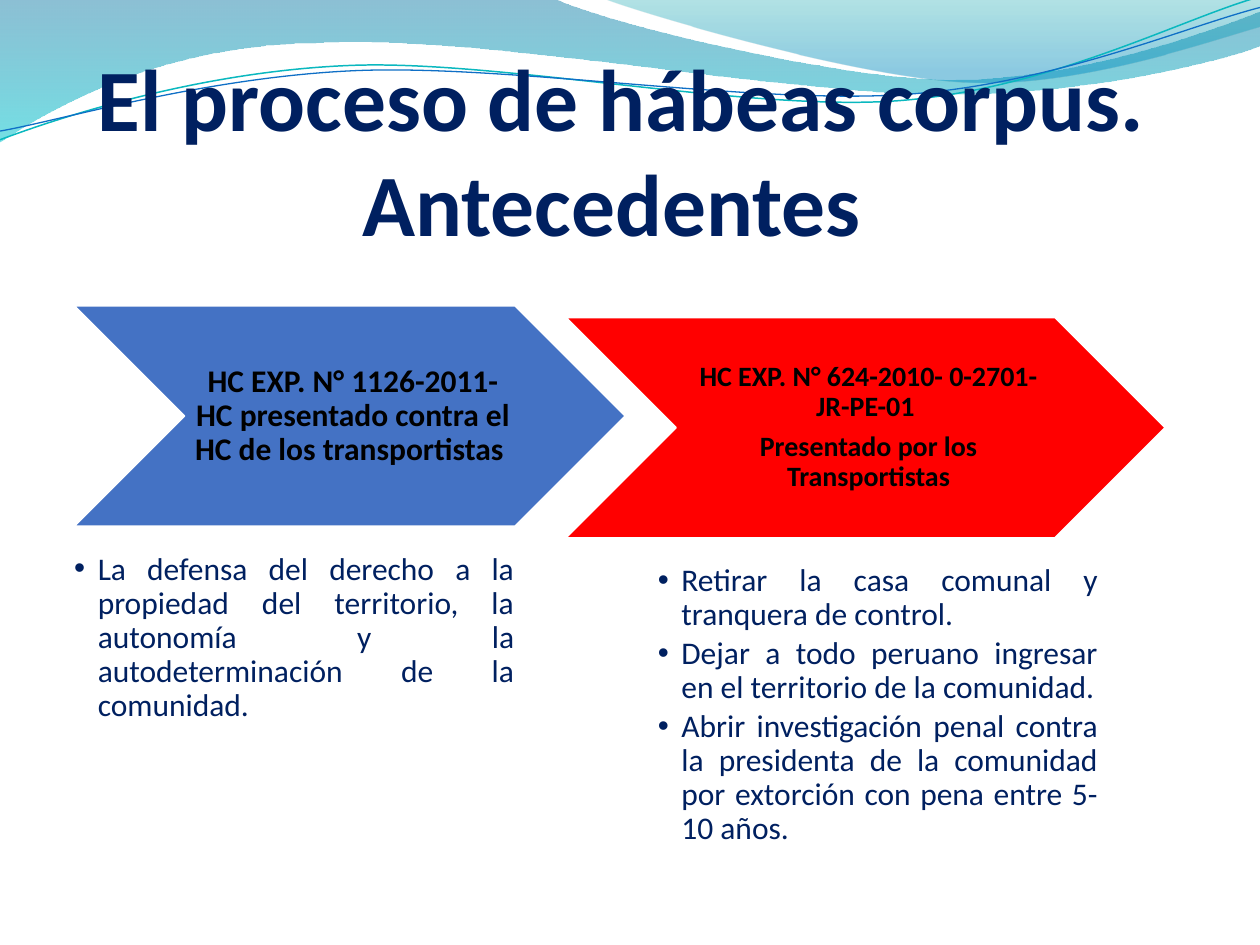
from dataclasses import dataclass

from lxml.etree import SubElement
from pptx import Presentation
from pptx.dml.color import RGBColor
from pptx.enum.shapes import MSO_SHAPE
from pptx.enum.text import MSO_ANCHOR, PP_ALIGN
from pptx.oxml.ns import qn
from pptx.util import Pt


@dataclass(frozen=True)
class Theme:
    font: str = "Calibri"
    navy: str = "002060"
    black: str = "000000"
    white: str = "FFFFFF"
    blue: str = "4472C4"
    red: str = "FF0000"
    title_size: float = 50
    body_size: float = 18
    small_size: float = 16


THEME = Theme()
SLIDE_W, SLIDE_H = 720, 540
CHEVRON_H = 126
CLAIMS_W, CLAIMS_H, CLAIMS_DROP = 251.5, 167, 141.2
WAVE_LINE_TILT = 357.3

# Outlines in points: a start, then one tuple per line (2 numbers) or curve (6).
LEFT_WAVE = [
    (0, -0.7), (316.8, -0.7),
    (342.7, 12.2, 478.1, 45.4, 545.8, 45.4),
    (614.2, 45.4, 689.8, 18.7, 720, 6.5),
    (720.7, 25.9),
    (707.8, 31.7, 626.4, 54.7, 537.1, 54),
    (447.8, 54, 275, 20.2, 185, 24.5),
    (92.9, 25.2, 33.1, 59.8, -0.7, 81.4),
    (0, -0.7),
]
RIGHT_WAVE = [
    (344.9, -0.7),
    (366.5, 7.9, 491, 44.6, 553.7, 46.8),
    (616.3, 49.7, 691.9, 23, 720, 15.1),
    (720, 0),
    (344.9, -0.7),
]
TEAL_LINE = [
    (-1.4, 62.9),
    (33.7, 51.6, 114, 29.4, 199.8, 29.9),
    (284.8, 30.3, 425.8, 67.2, 512.4, 64.8),
    (599, 62.4, 676.4, 25.7, 720.2, 15.5),
]
BLUE_LINE = [
    (-1.1, 57.9),
    (32.9, 53.7, 118.3, 32.5, 204, 33),
    (290.5, 33.5, 428.9, 63, 515.5, 61.4),
    (601.4, 59.7, 678.5, 30.1, 721.4, 21.3),
]


def rgb(color):
    return RGBColor.from_string(color)


def add_outline(slide, outline, close):
    """Draw through all points, then join each curve's three points into one curve."""
    start, *rest = [(Pt(x), Pt(y)) for part in outline
                    for x, y in zip(part[::2], part[1::2])]
    builder = slide.shapes.build_freeform(*start)
    builder.add_line_segments(rest, close=close)
    shape = builder.convert_to_shape()
    shape.shadow.inherit = False
    segments = iter(list(shape._element.iter(qn("a:lnTo"))))
    for part in outline[1:]:
        segment = next(segments)
        if len(part) == 6:
            curve = segment.makeelement(qn("a:cubicBezTo"))
            segment.addprevious(curve)
            for corner in (segment, next(segments), next(segments)):
                curve.append(corner[0])
                corner.getparent().remove(corner)
    return shape


def add_wave(slide, outline, stops):
    """Fill from top to bottom; each stop is position, color, opacity percent."""
    wave = add_outline(slide, outline, close=True)
    wave.line.fill.background()
    wave.fill.gradient()
    wave.fill.gradient_angle = 270
    for stop, (position, color, _) in zip(wave.fill.gradient_stops, stops):
        stop.position = position
        stop.color.rgb = rgb(color)
    for node, (_, _, opacity) in zip(wave._element.iter(qn("a:srgbClr")), stops):
        SubElement(node, qn("a:alpha"), val=str(opacity * 1000))


def add_wave_line(slide, outline, color, width):
    wave_line = add_outline(slide, outline, close=False)
    wave_line.rotation = WAVE_LINE_TILT
    wave_line.fill.background()
    wave_line.line.color.rgb = rgb(color)
    wave_line.line.width = Pt(width)


def add_header_waves(slide):
    add_wave(slide, LEFT_WAVE, [(0, "0074A1", 45), (1, "00C6CF", 55)])
    add_wave(slide, RIGHT_WAVE, [(0, "00A1A9", 30), (0.8, "008BBF", 45)])
    add_wave_line(slide, TEAL_LINE, "0AB8BF", 0.85)
    add_wave_line(slide, BLUE_LINE, "0F6FC6", 0.75)


def add_bullet(paragraph, indent):
    properties = paragraph._p.get_or_add_pPr()
    properties.set("marL", str(Pt(indent)))
    properties.set("indent", str(-Pt(indent)))
    SubElement(properties, qn("a:buFont"), typeface="Arial")
    SubElement(properties, qn("a:buChar"), char="•")


def add_text(slide, box, texts, size, color, align, anchor=MSO_ANCHOR.TOP, bold=False,
             insets=(0, 0, 0, 0), spacing=None, after=0, bulleted=False):
    frame = slide.shapes.add_textbox(*map(Pt, box)).text_frame
    frame.word_wrap = True
    frame.vertical_anchor = anchor
    (frame.margin_left, frame.margin_top,
     frame.margin_right, frame.margin_bottom) = map(Pt, insets)
    for index, text in enumerate(texts):
        paragraph = frame.add_paragraph() if index else frame.paragraphs[0]
        paragraph.alignment = align
        if spacing:
            paragraph.line_spacing = spacing
        paragraph.space_after = Pt(after)
        if bulleted:
            add_bullet(paragraph, 13.5)
        run = paragraph.add_run()
        run.text = text
        run.font.name = THEME.font
        run.font.size = Pt(size)
        run.font.bold = bold
        run.font.color.rgb = rgb(color)


def add_title(slide, box, text):
    add_text(slide, box, [text], THEME.title_size, THEME.navy, PP_ALIGN.CENTER,
             MSO_ANCHOR.BOTTOM, bold=True)


def add_case(slide, left, top, width, fill, heading, heading_size, insets,
             claims, claims_shift):
    """A chevron naming the case file, with its claims below."""
    chevron = slide.shapes.add_shape(
        MSO_SHAPE.CHEVRON, Pt(left), Pt(top), Pt(width), Pt(CHEVRON_H))
    chevron.shadow.inherit = False
    chevron.fill.solid()
    chevron.fill.fore_color.rgb = rgb(fill)
    chevron.line.color.rgb = rgb(THEME.white)
    chevron.line.width = Pt(1)

    notch = CHEVRON_H / 2
    add_text(slide, (left + notch, top, width - 2 * notch, CHEVRON_H), heading,
             heading_size, THEME.black, PP_ALIGN.CENTER, MSO_ANCHOR.MIDDLE, bold=True,
             insets=insets, spacing=0.9, after=0.35 * heading_size)
    add_text(slide, (left + claims_shift, top + CLAIMS_DROP, CLAIMS_W, CLAIMS_H),
             claims, THEME.body_size, THEME.navy, PP_ALIGN.JUSTIFY,
             spacing=0.9, after=0.15 * THEME.body_size, bulleted=True)


def main():
    deck = Presentation()
    deck.slide_width, deck.slide_height = Pt(SLIDE_W), Pt(SLIDE_H)
    slide = deck.slides.add_slide(deck.slide_layouts[6])
    add_header_waves(slide)
    add_title(slide, (31.2, 60.3, 648, 84.8),
              "El proceso de hábeas corpus. Antecedentes ")
    add_case(slide, 42.4, 174.7, 314.9, THEME.blue,
             ["HC EXP. N° 1126-2011-HC presentado contra el HC de los transportistas "],
             THEME.body_size, (5.67, 1.89, 1.89, 1.89),
             ["La defensa del derecho a la propiedad del territorio, la autonomía "
              "y la autodeterminación de la comunidad."], 0)
    add_case(slide, 323.3, 181.4, 342.6, THEME.red,
             ["HC EXP. N° 624-2010- 0-2701-JR-PE-01 ",
              "Presentado por los Transportistas"],
             THEME.small_size, (5.04, 1.68, 1.68, 1.68),
             ["Retirar la casa comunal y tranquera de control.",
              "Dejar a todo peruano ingresar en el territorio de la comunidad.",
              "Abrir investigación penal contra la presidenta de la comunidad "
              "por extorción con pena entre 5-10 años."], 52.6)
    deck.save("out.pptx")


if __name__ == "__main__":
    main()
